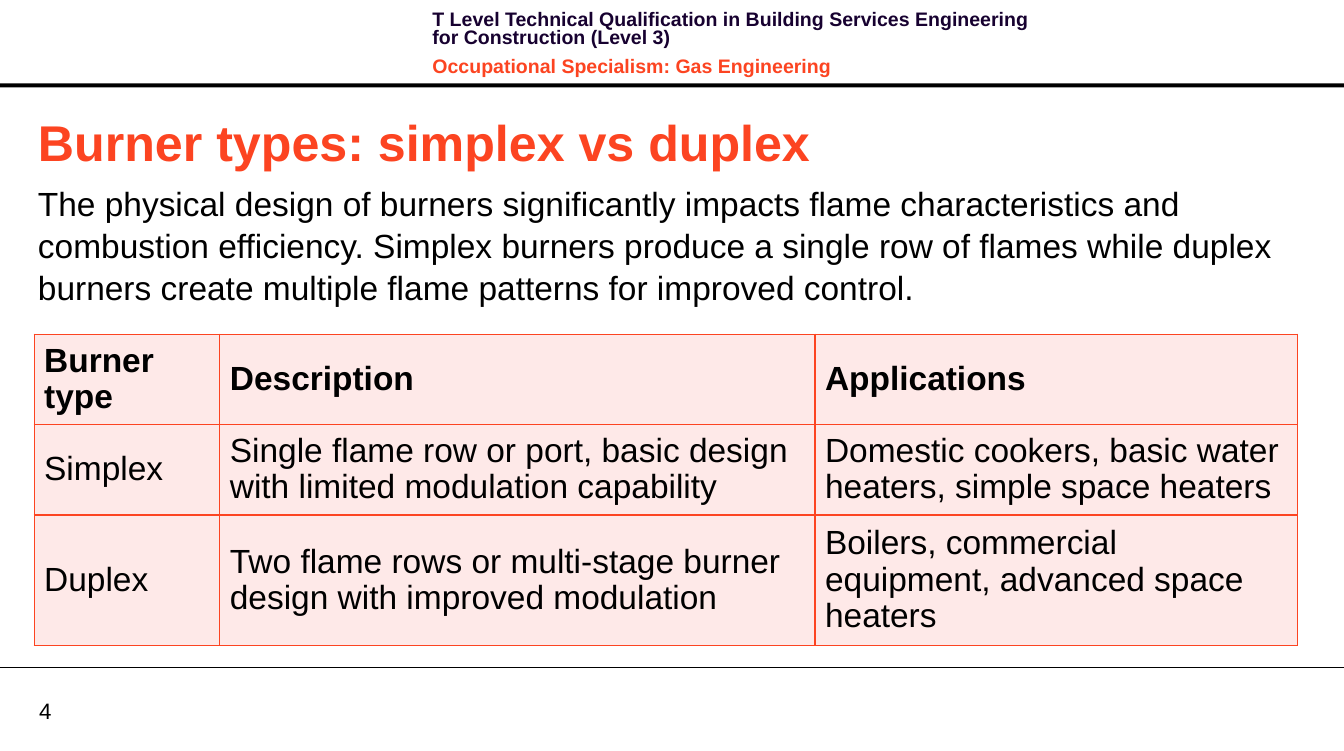
import pptx
import pptx.dml.color
import pptx.enum.shapes
import pptx.enum.text
import pptx.oxml
import pptx.oxml.ns
import pptx.util
from pptx.util import Inches

RGBColor = pptx.dml.color.RGBColor
ANCHOR = pptx.enum.text.MSO_ANCHOR
BLACK = RGBColor(0x00, 0x00, 0x00)
NAVY = RGBColor(0x17, 0x01, 0x30)
ORANGE = RGBColor(0xFC, 0x44, 0x21)
PINK = RGBColor(0xFE, 0xE9, 0xE8)


def write(paragraph, text, size=24, color=BLACK, bold=False,
          spacing=None, before=0, after=0):
    paragraph.text = text
    paragraph.space_before = pptx.util.Pt(before)
    paragraph.space_after = pptx.util.Pt(after)
    if spacing:
        paragraph.line_spacing = spacing
    font = paragraph.font
    font.name = "Arial"
    font.size = pptx.util.Pt(size)
    font.bold = bold
    font.color.rgb = color


class BurnerSlide:
    def __init__(self, presentation):
        self.shapes = presentation.slides.add_slide(presentation.slide_layouts[6]).shapes

    def text_box(self, left, top, width, height, anchor=ANCHOR.TOP, inset=True):
        box = self.shapes.add_textbox(Inches(left), Inches(top), Inches(width), Inches(height))
        frame = box.text_frame
        frame.word_wrap = True
        frame.vertical_anchor = anchor
        if not inset:
            frame.margin_left = frame.margin_right = 0
            frame.margin_top = frame.margin_bottom = 0
        return frame

    def band(self, left, top, width, height):
        bar = self.shapes.add_shape(pptx.enum.shapes.MSO_SHAPE.RECTANGLE, Inches(left),
                                    Inches(top), Inches(width), Inches(height))
        bar.shadow.inherit = False
        bar.fill.solid()
        bar.fill.fore_color.rgb = BLACK
        bar.line.fill.background()

    def rule(self, top, width):
        line = self.shapes.add_connector(pptx.enum.shapes.MSO_CONNECTOR.STRAIGHT,
                                         0, Inches(top), Inches(width), Inches(top))
        line.line.color.rgb = BLACK
        line.line.width = pptx.util.Pt(0.75)
        line._element.spPr.append(pptx.oxml.parse_xml(
            f'<a:effectLst {pptx.oxml.ns.nsdecls("a")}/>'))

    def cell_borders(self, cell):
        properties = cell._tc.get_or_add_tcPr()
        for position, side in enumerate(("lnL", "lnR", "lnT", "lnB")):
            properties.insert(position, pptx.oxml.parse_xml(
                f'<a:{side} {pptx.oxml.ns.nsdecls("a")} w="12700"><a:solidFill>'
                f'<a:srgbClr val="{ORANGE}"/></a:solidFill></a:{side}>'))

    def table(self, left, top, widths, heights, rows):
        table = self.shapes.add_table(len(rows), len(widths), Inches(left), Inches(top),
                                      Inches(sum(widths)), Inches(sum(heights))).table
        for column, width in zip(table.columns, widths):
            column.width = Inches(width)
        for r, (height, texts) in enumerate(zip(heights, rows)):
            table.rows[r].height = Inches(height)
            for c, text in enumerate(texts):
                cell = table.cell(r, c)
                cell.vertical_anchor = ANCHOR.MIDDLE
                cell.fill.solid()
                cell.fill.fore_color.rgb = PINK
                self.cell_borders(cell)
                write(cell.text_frame.paragraphs[0], text, bold=r == 0, spacing=0.97)


def main():
    presentation = pptx.Presentation()
    presentation.slide_width = Inches(13.39)
    presentation.slide_height = Inches(7.48)
    slide = BurnerSlide(presentation)

    # Header and footer
    slide.band(0, 0.83, 13.39, 0.04)
    slide.rule(6.65, 13.39)
    page_number = slide.text_box(0.39, 6.94, 0.64, 0.27, ANCHOR.MIDDLE, inset=False)
    write(page_number.paragraphs[0], "4", size=16)
    course = slide.text_box(4.21, 0.07, 6.37, 0.64)
    leading = pptx.util.Pt(13.1)
    write(course.paragraphs[0],
          "T Level Technical Qualification in Building Services Engineering "
          "for Construction (Level 3)",
          size=14, color=NAVY, bold=True, spacing=leading, after=4)
    write(course.add_paragraph(), "Occupational Specialism: Gas Engineering",
          size=14, color=ORANGE, bold=True, spacing=leading, before=4, after=4)

    # Title and introduction
    title = slide.text_box(0.28, 1.05, 12.72, 0.71, ANCHOR.MIDDLE)
    write(title.paragraphs[0], "Burner types: simplex vs duplex",
          size=36, color=ORANGE, bold=True)
    introduction = slide.text_box(0.28, 1.76, 12.6, 1.31)
    write(introduction.paragraphs[0],
          "The physical design of burners significantly impacts flame characteristics "
          "and combustion efficiency. Simplex burners produce a single row of flames "
          "while duplex burners create multiple flame patterns for improved control.",
          spacing=1.04)

    # Comparison of burner types
    slide.table(0.34, 3.33, (1.85, 5.93, 4.81), (0.9, 0.9, 1.3), (
        ("Burner type", "Description", "Applications"),
        ("Simplex",
         "Single flame row or port, basic design with limited modulation capability",
         "Domestic cookers, basic water heaters, simple space heaters"),
        ("Duplex",
         "Two flame rows or multi-stage burner design with improved modulation",
         "Boilers, commercial equipment, advanced space heaters"),
    ))

    presentation.save("out.pptx")


if __name__ == "__main__":
    main()
